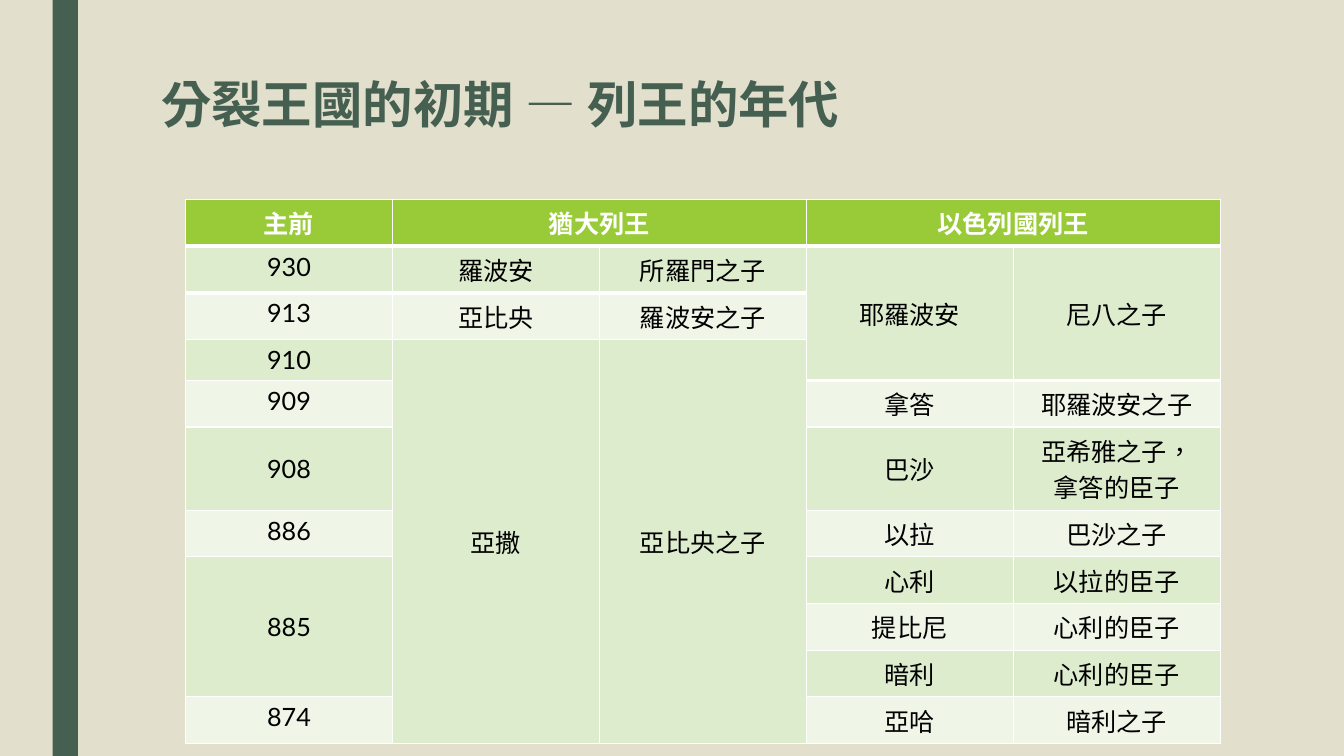
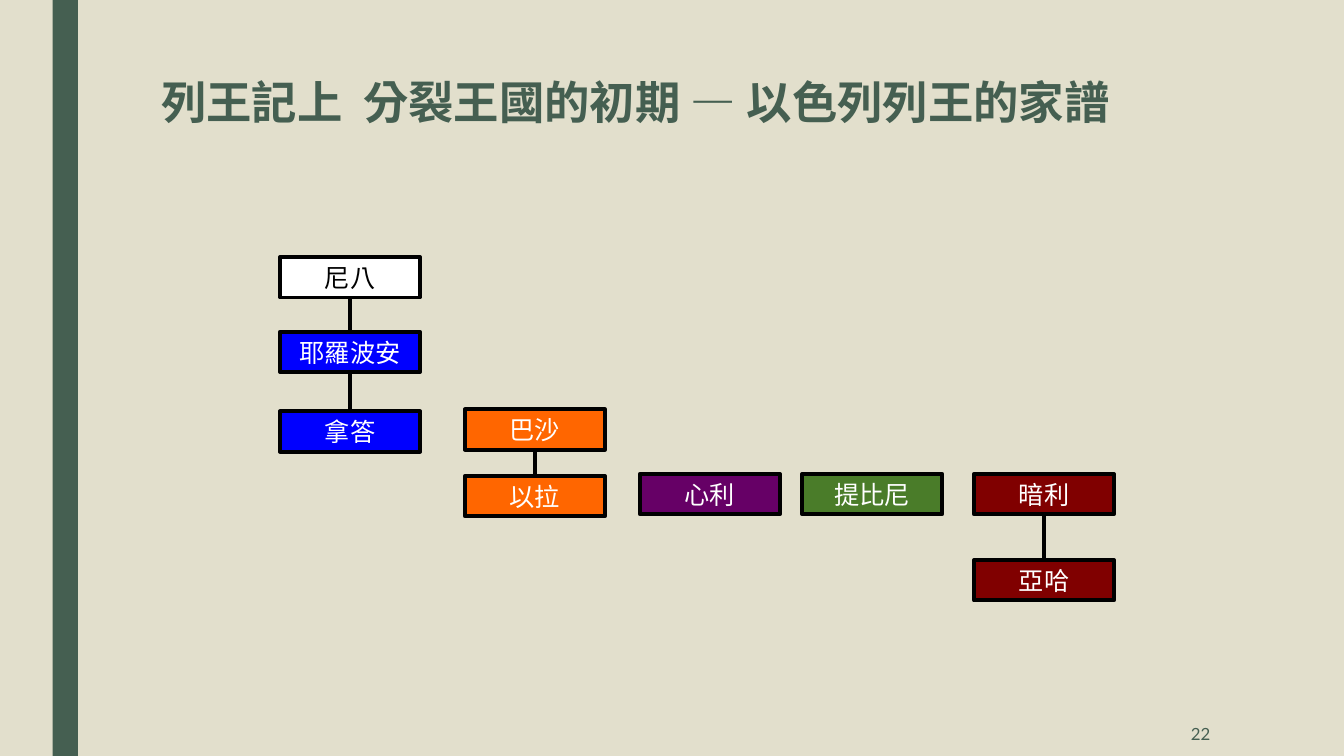
import dataclasses

import pptx
import pptx.dml.color
import pptx.enum.lang
import pptx.enum.shapes
import pptx.enum.text
import pptx.oxml
import pptx.oxml.ns
import pptx.util

Pt = pptx.util.Pt
ALIGN = pptx.enum.text.PP_ALIGN
ANCHOR = pptx.enum.text.MSO_ANCHOR
COLS, ROWS = 133.33, 75


@dataclasses.dataclass(frozen=True)
class Theme:
    """Colours, font and type sizes shared by the slides."""
    paper: str = "E2DFCC"
    ink: str = "455F51"
    black: str = "000000"
    white: str = "FFFFFF"
    head: str = "99CB38"
    odd: str = "DEECCE"
    even: str = "EFF6E8"
    blue: str = "0000FF"
    orange: str = "FF6600"
    purple: str = "660066"
    green: str = "4A7C29"
    maroon: str = "800000"
    font: str = "Lato"
    title: float = 36
    long_title: float = 32.4
    body: float = 18
    small: float = 12
    line: float = 2.75
    head_line: float = 3


T = Theme()


@dataclasses.dataclass(frozen=True)
class Box:
    """A region of the slide grid, whose cells are a tenth of an inch."""
    x: float
    y: float
    w: float
    h: float

    def sub(self, x, y, w, h):
        """Return a box placed relative to this one."""
        return Box(self.x + x, self.y + y, w, h)

    def emu(self):
        """Return left, top, width and height as lengths."""
        return [grid(v) for v in (self.x, self.y, self.w, self.h)]


def grid(cells):
    """Turn a number of grid cells into a length."""
    return pptx.util.Inches(cells / 10)


SLIDE = Box(0, 0, COLS, ROWS)


def rgb(code):
    """Turn a hex code into a colour."""
    return pptx.dml.color.RGBColor.from_string(code)


def set_all(obj, values):
    """Set each attribute named in a dict."""
    for name, value in values.items():
        setattr(obj, name, value)


def paint(fill, code):
    """Make a fill solid in one colour."""
    fill.solid()
    fill.fore_color.rgb = rgb(code)


def write(tf, text, size=T.body, color=T.black, bold=False, **layout):
    """Write text, one paragraph a line, in one style."""
    for i, line in enumerate(text.split("\n")):
        p = tf.add_paragraph() if i else tf.paragraphs[0]
        set_all(p, {"alignment": ALIGN.CENTER, **layout})
        r = p.add_run()
        r.text = line
        set_all(r.font, {
            "name": T.font, "size": Pt(size), "bold": bold,
            "language_id": pptx.enum.lang.MSO_LANGUAGE_ID.TRADITIONAL_CHINESE})
        r.font.color.rgb = rgb(color)


def add_rect(slide, box, fill, outline=None):
    """Add a flat rectangle, outlined when a colour is given."""
    sp = slide.shapes.add_shape(
        pptx.enum.shapes.MSO_SHAPE.RECTANGLE, *box.emu())
    sp.shadow.inherit = False
    paint(sp.fill, fill)
    if outline:
        sp.line.width = Pt(T.line)
        sp.line.color.rgb = rgb(outline)
    else:
        sp.line.fill.background()
    return sp


def add_text(slide, box, text, anchor=ANCHOR.TOP, **style):
    """Add a wrapping text box."""
    tf = slide.shapes.add_textbox(*box.emu()).text_frame
    set_all(tf, {"word_wrap": True, "vertical_anchor": anchor})
    write(tf, text, **style)


def add_slide(prs, title, size):
    """Add a blank slide with the side band and a title."""
    slide = prs.slides.add_slide(prs.slide_layouts[6])
    add_rect(slide, SLIDE.sub(5.23, 0, 2.5, ROWS), T.ink)
    add_text(slide, SLIDE.sub(15, 7.5, 107.1, 7.7), title, size=size,
             color=T.ink, bold=True, alignment=ALIGN.LEFT, line_spacing=0.89)
    return slide


def add_page_number(slide, box, number):
    """Add the page number."""
    add_text(slide, box, number, ANCHOR.MIDDLE, size=T.small, color=T.ink,
             alignment=ALIGN.RIGHT, space_after=Pt(6))


def add_border(cell, edge):
    """Draw the heavy line under the head on one edge of a cell."""
    cell._tc.get_or_add_tcPr().insert(0, pptx.oxml.parse_xml(
        f'<a:{edge} {pptx.oxml.ns.nsdecls("a")} w="{Pt(T.head_line)}">'
        f'<a:solidFill><a:srgbClr val="{T.white}"/></a:solidFill></a:{edge}>'))


def add_reigns(slide, box, rows, heights, spans, middle):
    """Fill a box with the banded table of reigns."""
    table = slide.shapes.add_table(len(rows), len(rows[0]), *box.emu()).table
    for i, row in enumerate(rows):
        table.rows[i].height = grid(heights.get(i, ROW_HEIGHT))
        fill = (T.odd if i % 2 else T.even) if i else T.head
        for j, text in enumerate(row):
            cell = table.cell(i, j)
            paint(cell.fill, fill)
            if i < 2:
                add_border(cell, ("lnB", "lnT")[i])
            if text:
                write(cell.text_frame, text, bold=i == 0,
                      color=T.black if i else T.white)
    for (i, j), (down, across) in spans.items():
        table.cell(i, j).merge(table.cell(i + down - 1, j + across - 1))
    for i, j in middle:
        table.cell(i, j).vertical_anchor = ANCHOR.MIDDLE


def add_link(slide, parent, child):
    """Draw a line from the foot of a parent to the top of a child."""
    x = parent.x + parent.w / 2
    ends = [grid(v) for v in (x, parent.y + parent.h, x, child.y)]
    c = slide.shapes.add_connector(pptx.enum.shapes.MSO_CONNECTOR.STRAIGHT, *ends)
    c.line.width = Pt(T.line)
    c.line.color.rgb = rgb(T.black)
    sp_pr = c._element.find(pptx.oxml.ns.qn("p:spPr"))
    sp_pr.append(pptx.oxml.parse_xml(
        f"<a:effectLst {pptx.oxml.ns.nsdecls('a')}/>"))


def add_family_tree(slide, box, people):
    """Place the kings in a box and join each to his father."""
    boxes = {}
    for name, x, y, fill, father in people:
        node = boxes[name] = box.sub(x, y, 13.9, 4)
        sp = add_rect(slide, node, fill, T.black)
        tf = sp.text_frame
        set_all(tf, {"vertical_anchor": ANCHOR.MIDDLE, "margin_top": 0,
                     "margin_bottom": 0, "word_wrap": False})
        write(tf, name, color=T.black if fill == T.white else T.white)
        if father:
            add_link(slide, boxes[father], node)


REIGNS = [
    ("主前", "猶大列王", "", "以色列國列王", ""),
    ("930", "羅波安", "所羅門之子", "耶羅波安", "尼八之子"),
    ("913", "亞比央", "羅波安之子", "", ""),
    ("910", "亞撒", "亞比央之子", "", ""),
    ("909", "", "", "拿答", "耶羅波安之子"),
    ("908", "", "", "巴沙", "亞希雅之子，\n拿答的臣子"),
    ("886", "", "", "以拉", "巴沙之子"),
    ("885", "", "", "心利", "以拉的臣子"),
    ("", "", "", "提比尼", "心利的臣子"),
    ("", "", "", "暗利", "心利的臣子"),
    ("874", "", "", "亞哈", "暗利之子"),
]
ROW_HEIGHT = 4.63
HEIGHTS = {3: 4.05, 5: 8.25}
SPANS = {(0, 1): (1, 2), (0, 3): (1, 2), (1, 3): (3, 1), (1, 4): (3, 1),
         (3, 1): (8, 1), (3, 2): (8, 1), (7, 0): (3, 1)}
MIDDLE = [(1, 3), (1, 4), (3, 1), (3, 2), (5, 0), (5, 3), (7, 0)]
KINGS = [
    ("尼八", 0, 0, T.white, None),
    ("耶羅波安", 0, 7.4, T.blue, "尼八"),
    ("拿答", 0, 15.3, T.blue, "耶羅波安"),
    ("巴沙", 18.35, 15.1, T.orange, None),
    ("以拉", 18.35, 21.7, T.orange, "巴沙"),
    ("心利", 35.7, 21.5, T.purple, None),
    ("提比尼", 51.8, 21.5, T.green, None),
    ("暗利", 68.85, 21.5, T.maroon, None),
    ("亞哈", 68.85, 30.05, T.maroon, "暗利"),
]


def main():
    """Build and save the two slides."""
    prs = pptx.Presentation()
    _, _, prs.slide_width, prs.slide_height = SLIDE.emu()
    paint(prs.slide_master.background.fill, T.paper)

    slide = add_slide(prs, "分裂王國的初期 — 列王的年代", T.title)
    add_reigns(slide, SLIDE.sub(18.4, 19.8, 102.65, 54), REIGNS, HEIGHTS,
               SPANS, MIDDLE)

    slide = add_slide(prs, "列王記上  分裂王國的初期 — 以色列列王的家譜", T.long_title)
    add_family_tree(slide, SLIDE.sub(27.77, 25.52, 82.8, 34.1), KINGS)
    add_page_number(slide, SLIDE.sub(103.55, 70.6, 17.5, 4.4), "22")

    prs.save("out.pptx")


if __name__ == "__main__":
    main()
